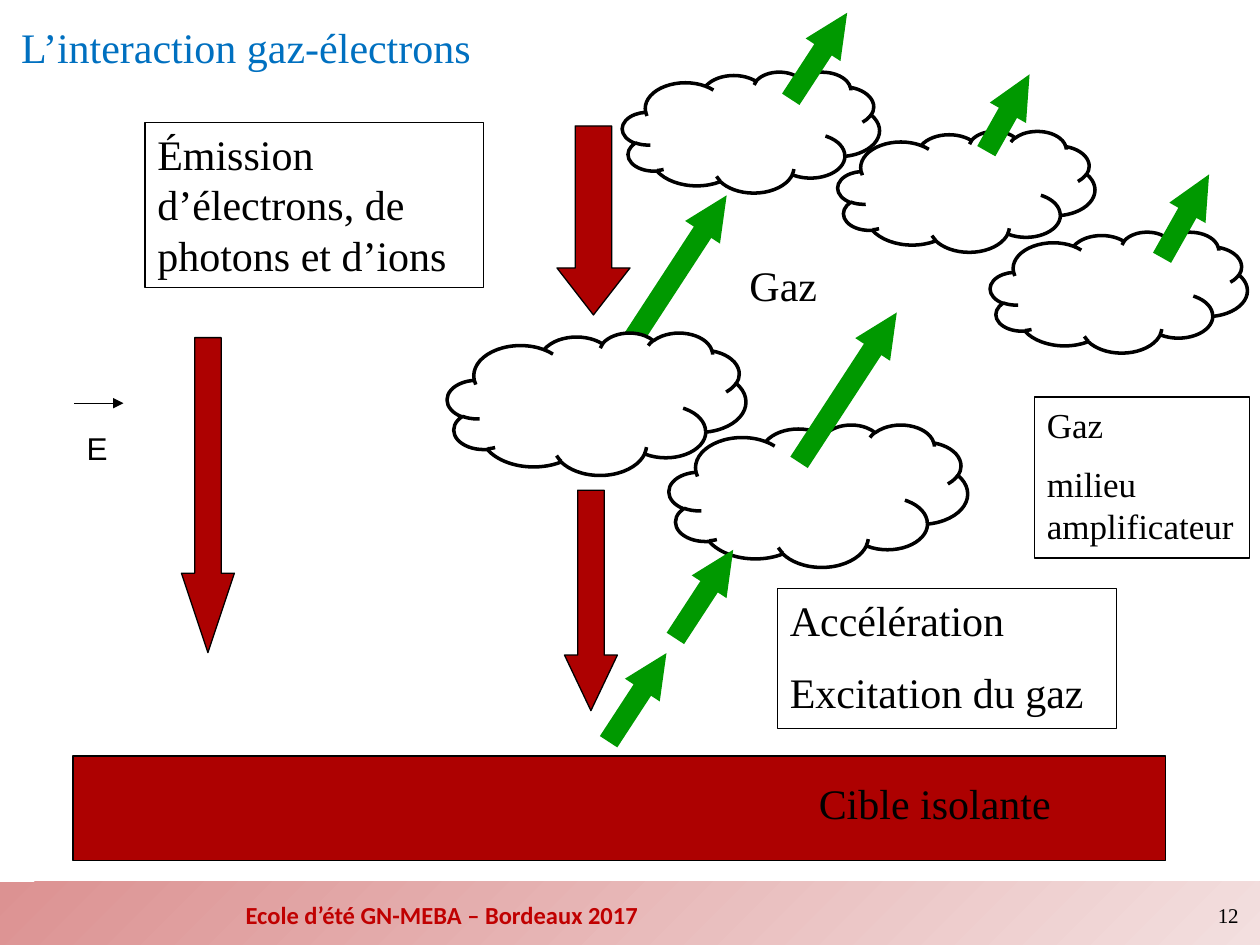
from dataclasses import dataclass
from typing import Optional

import pptx
import pptx.dml.color
import pptx.enum.dml
import pptx.enum.shapes
import pptx.enum.text
import pptx.oxml
import pptx.oxml.ns
import pptx.util

PX = 9144
COLORS = {
    "black": "000000",
    "white": "FFFFFF",
    "title": "0070C0",
    "red": "AD0101",
    "green": "009900",
    "footer": "C00000",
    "band_start": "DC9292",
    "band_end": "F3DFDF",
}
SERIF = "Times New Roman"
SHAPES = pptx.enum.shapes.MSO_SHAPE
ALIGN = pptx.enum.text.PP_ALIGN
ANCHOR = pptx.enum.text.MSO_ANCHOR
GREEN_HEIGHT = 33


@dataclass
class Label:
    left: int
    top: int
    width: int
    height: int
    lines: tuple[str, ...]
    size: int = 24
    font: str = SERIF
    color: str = "black"
    bold: bool = False
    framed: bool = False
    wrap: bool = True
    align: ALIGN = ALIGN.LEFT
    anchor: ANCHOR = ANCHOR.TOP


@dataclass
class Figure:
    kind: SHAPES
    left: int
    top: int
    width: int
    height: int
    fill: str
    outline: Optional[float] = 0.75
    rotation: float = 0
    adjustments: tuple[float, ...] = ()


def rgb(name: str) -> pptx.dml.color.RGBColor:
    return pptx.dml.color.RGBColor.from_string(COLORS[name])


def down_arrow(left: int, top: int, width: int, height: int, head: float) -> Figure:
    return Figure(SHAPES.DOWN_ARROW, left, top, width, height, "red", adjustments=(0.5, head))


def green_arrow(left: int, top: int, length: int, rotation: float = 303.1) -> Figure:
    return Figure(SHAPES.RIGHT_ARROW, left, top, length, GREEN_HEIGHT, "green",
                  None, rotation, (0.5, 1.062))


def cloud(left: int, top: int, width: int, height: int) -> Figure:
    return Figure(SHAPES.CLOUD, left, top, width, height, "white", 2)


def draw_figure(slide, figure: Figure) -> None:
    shape = slide.shapes.add_shape(figure.kind, figure.left * PX, figure.top * PX,
                                   figure.width * PX, figure.height * PX)
    shape.shadow.inherit = False
    shape.rotation = figure.rotation
    for index, value in enumerate(figure.adjustments):
        shape.adjustments[index] = value
    shape.fill.solid()
    shape.fill.fore_color.rgb = rgb(figure.fill)
    if figure.outline is None:
        shape.line.fill.background()
    else:
        shape.line.color.rgb = rgb("black")
        shape.line.width = pptx.util.Pt(figure.outline)


def draw_label(slide, label: Label) -> None:
    box = slide.shapes.add_textbox(label.left * PX, label.top * PX,
                                   label.width * PX, label.height * PX)
    if label.framed:
        box.line.color.rgb = rgb("black")
        box.line.width = pptx.util.Pt(0.75)
    frame = box.text_frame
    frame_format = {"word_wrap": label.wrap, "vertical_anchor": label.anchor}
    for attribute, value in frame_format.items():
        setattr(frame, attribute, value)
    font_format = {"name": label.font, "size": pptx.util.Pt(label.size), "bold": label.bold}
    for index, line in enumerate(label.lines):
        paragraph = frame.add_paragraph() if index else frame.paragraphs[0]
        paragraph.alignment = label.align
        if index:
            paragraph.space_before = pptx.util.Pt(label.size // 2)
        run = paragraph.add_run()
        run.text = line
        for attribute, value in font_format.items():
            setattr(run.font, attribute, value)
        run.font.color.rgb = rgb(label.color)


def draw_footer_band(slide) -> None:
    band = slide.shapes.add_shape(SHAPES.RECTANGLE, 0, 700 * PX, 1000 * PX, 50 * PX)
    band.shadow.inherit = False
    band.line.fill.background()
    band.fill.gradient()
    band.fill.gradient_angle = 315
    for stop, color in zip(band.fill.gradient_stops, ("band_start", "band_end")):
        stop.color.rgb = rgb(color)


def draw_field_vector(slide) -> None:
    vector = slide.shapes.add_connector(pptx.enum.shapes.MSO_CONNECTOR.STRAIGHT,
                                        59 * PX, 320 * PX, 98 * PX, 320 * PX)
    vector.line.color.rgb = rgb("black")
    vector.line.width = pptx.util.Pt(0.75)
    outline = vector.line._get_or_add_ln()
    head = pptx.oxml.parse_xml(
        f'<a:tailEnd {pptx.oxml.ns.nsdecls("a")} type="triangle"/>')
    outline.append(head)
    effects = pptx.oxml.parse_xml(f'<a:effectLst {pptx.oxml.ns.nsdecls("a")}/>')
    outline.addnext(effects)


FIGURES = [
    down_arrow(442, 100, 58, 150, 0.643),
    down_arrow(144, 268, 42, 250, 1.5),
    down_arrow(448, 389, 42, 175, 1.05),
    Figure(SHAPES.RECTANGLE, 58, 600, 867, 83, "red"),
    green_arrow(467, 198, 142),
    cloud(355, 264, 237, 113),
    cloud(531, 337, 237, 113),
    cloud(786, 184, 204, 96),
    cloud(665, 104, 204, 96),
    cloud(494, 57, 204, 96),
    green_arrow(464, 537, 84),
    green_arrow(517, 455, 84),
    green_arrow(602, 291, 142),
    green_arrow(609, 28, 82),
    green_arrow(765, 73, 70, 299.4),
    green_arrow(903, 155, 76, 299.4),
]

LABELS = [
    Label(7, 12, 392, 50, ("L’interaction gaz-électrons",), color="title"),
    Label(115, 97, 269, 131, ("Émission d’électrons, de photons et d’ions",), framed=True),
    Label(585, 201, 86, 50, ("Gaz",)),
    Label(821, 315, 171, 128, ("Gaz", "milieu amplificateur"), size=20, framed=True),
    Label(617, 467, 269, 111, ("Accélération", "Excitation du gaz"), framed=True),
    Label(640, 612, 233, 50, ("Cible isolante",)),
    Label(59, 336, 47, 40, ("E",), size=18, font="Arial"),
    Label(185, 709, 338, 34, ("Ecole d’été GN-MEBA – Bordeaux 2017",), size=14,
          font="Calibri", color="footer", bold=True, wrap=False),
    Label(760, 706, 233, 40, ("12",), size=12, align=ALIGN.RIGHT, anchor=ANCHOR.MIDDLE),
]


def main() -> None:
    deck = pptx.Presentation()
    deck.slide_width = 1000 * PX
    deck.slide_height = 750 * PX
    slide = deck.slides.add_slide(deck.slide_layouts[6])
    draw_footer_band(slide)
    for figure in FIGURES:
        draw_figure(slide, figure)
    draw_field_vector(slide)
    for label in LABELS:
        draw_label(slide, label)
    deck.save("out.pptx")


if __name__ == "__main__":
    main()
